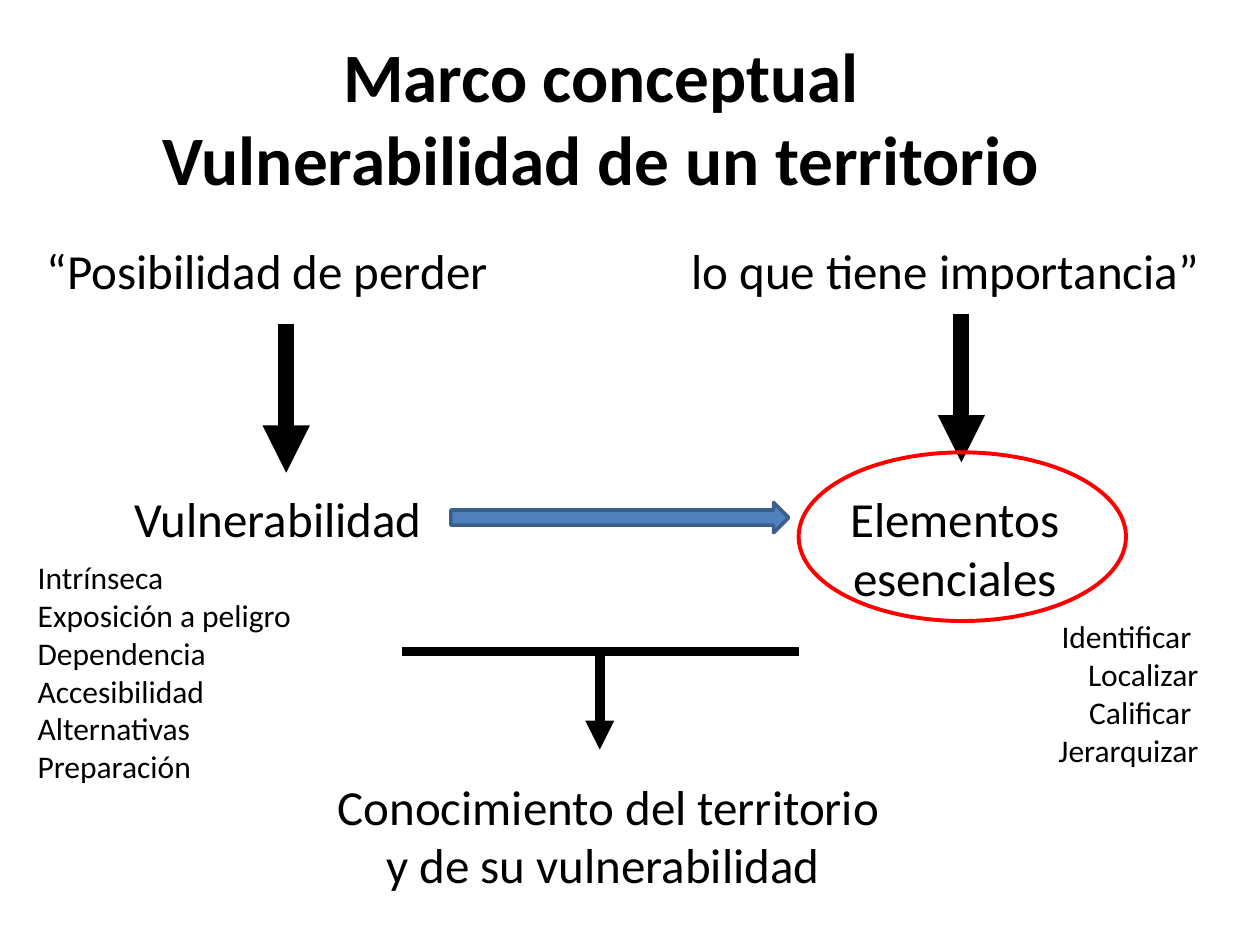
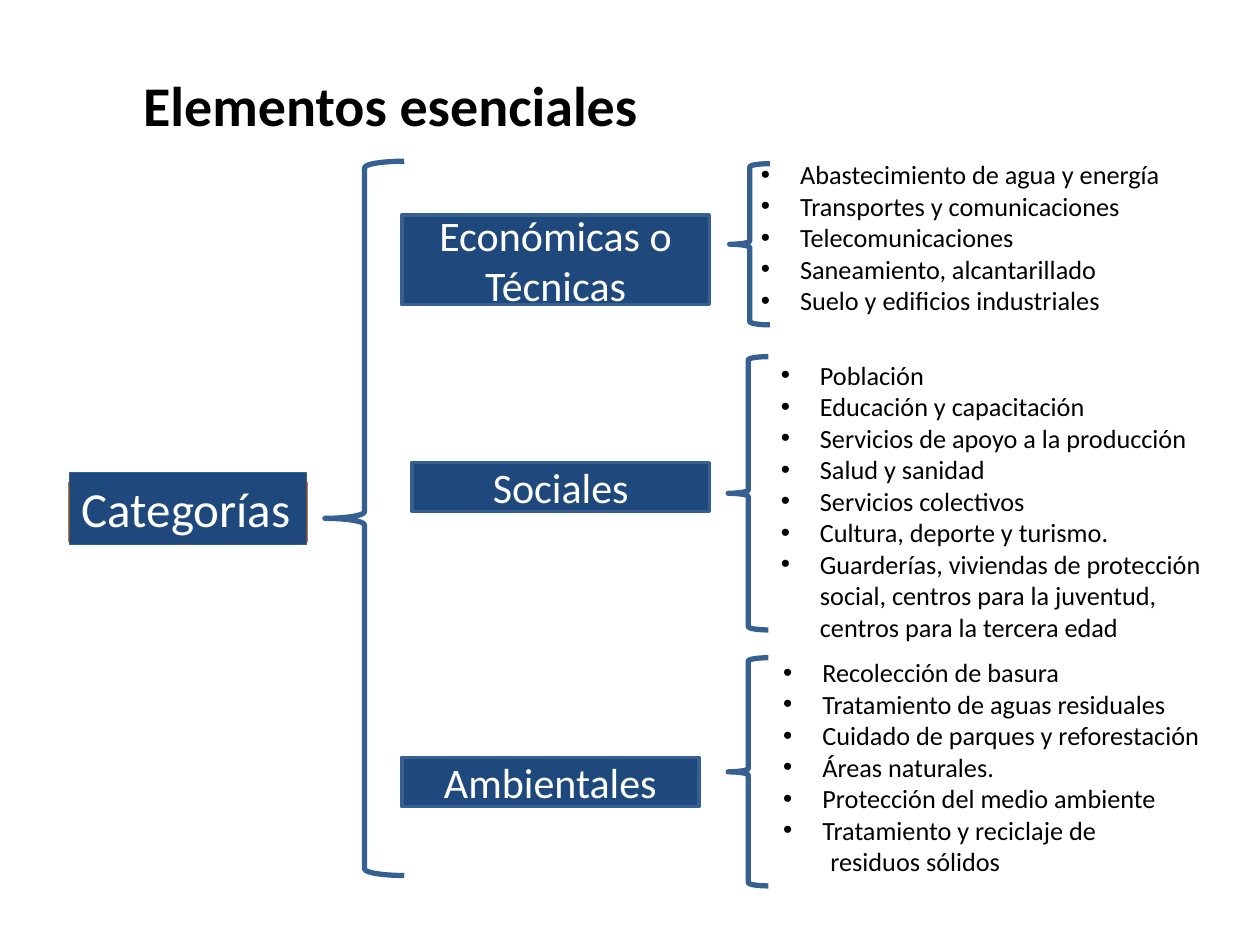
from lxml import etree
from pptx import Presentation
from pptx.dml.color import RGBColor
from pptx.enum.shapes import MSO_CONNECTOR, MSO_SHAPE
from pptx.enum.text import MSO_ANCHOR, MSO_AUTO_SIZE, PP_ALIGN
from pptx.oxml.ns import qn
from pptx.util import Cm, Pt

LEFT, CENTER, RIGHT = PP_ALIGN.LEFT, PP_ALIGN.CENTER, PP_ALIGN.RIGHT
TOP, MIDDLE = MSO_ANCHOR.TOP, MSO_ANCHOR.MIDDLE
RECTANGLE, ELLIPSE = MSO_SHAPE.RECTANGLE, MSO_SHAPE.OVAL
BRACE, BLOCK_ARROW = MSO_SHAPE.LEFT_BRACE, MSO_SHAPE.RIGHT_ARROW

FONT = "Calibri"
BLACK, WHITE, RED = "000000", "FFFFFF", "FF0000"
NAVY, STEEL = "1F497D", "376092"
BLUE, DARK_BLUE = "4F81BD", "3A5F8C"
PEACH, ORANGE = "FAC090", "E46C0A"
BULLET_INDENT = 0.79

# Category name, its box, its brace, its list area, its elements
CATEGORIES = [
    ("Económicas o Técnicas", (8.1, 4.34, 6.2, 1.8), (14.71, 3.3, 0.81, 3.25),
     (15.09, 3.07, 9.37, 3.45),
     ["Abastecimiento de agua y energía", "Transportes y comunicaciones",
      "Telecomunicaciones", "Saneamiento, alcantarillado",
      "Suelo y edificios industriales"]),
    ("Sociales", (8.31, 9.32, 5.99, 0.99), (14.68, 7.19, 0.81, 5.51),
     (15.49, 7.11, 9.19, 6.02),
     ["Población", "Educación y capacitación",
      "Servicios de apoyo a la producción", "Salud y sanidad",
      "Servicios colectivos", "Cultura, deporte y turismo.",
      "Guarderías, viviendas de protección social, "
      "centros para la juventud, centros para la tercera edad"]),
    ("Ambientales", (8.1, 15.27, 5.99, 0.99), (14.68, 13.26, 0.81, 4.6),
     (15.54, 13.11, 9.37, 4.75),
     ["Recolección de basura", "Tratamiento de aguas residuales",
      "Cuidado de parques y reforestación", "Áreas naturales.",
      "Protección del medio ambiente", "Tratamiento y reciclaje de"]),
]


def color(hex_value):
    return RGBColor.from_string(hex_value)


def area(place):
    return [Cm(length) for length in place]


def write(frame, text, size=28, ink=BLACK, bold=False, align=LEFT,
          bullet=False, indent=0):
    """Add one paragraph per line of text; a vertical tab breaks a line."""
    for line in text.split("\n"):
        para = frame.paragraphs[-1]
        if para.runs:
            para = frame.add_paragraph()
        para.text = line
        para.alignment = align
        for span in para.runs:
            span.font.name = FONT
            span.font.size = Pt(size)
            span.font.bold = bold
            span.font.color.rgb = color(ink)
        properties = para._p.get_or_add_pPr()
        if bullet:
            indent = BULLET_INDENT
            properties.set("indent", str(-Cm(indent)))
            etree.SubElement(properties, qn("a:buFont"), typeface="Arial")
            etree.SubElement(properties, qn("a:buChar"), char="•")
        properties.set("marL", str(Cm(indent)))


def add_title(page, text, place, size):
    title = page.shapes.title
    title.left, title.top, title.width, title.height = area(place)
    frame = title.text_frame
    frame.auto_size = MSO_AUTO_SIZE.NONE
    frame.word_wrap = True
    frame.vertical_anchor = MIDDLE
    write(frame, text, size=size, bold=True, align=CENTER)


def add_text(page, text, place, wrap=False, **style):
    frame = page.shapes.add_textbox(*area(place)).text_frame
    frame.word_wrap = wrap
    write(frame, text, **style)
    return frame


def add_figure(page, kind, place, line, width, fill=None):
    shape = page.shapes.add_shape(kind, *area(place))
    shape.shadow.inherit = False
    shape.line.color.rgb = color(line)
    shape.line.width = Pt(width)
    if fill:
        shape.fill.solid()
        shape.fill.fore_color.rgb = color(fill)
    else:
        shape.fill.background()
    return shape


def add_label(page, text, place, width=2, anchor=MIDDLE, **style):
    box = add_figure(page, RECTANGLE, place, STEEL, width, NAVY)
    box.text_frame.word_wrap = True
    box.text_frame.vertical_anchor = anchor
    write(box.text_frame, text, ink=WHITE, **style)


def add_line(page, start, end, width, arrow=True):
    line = page.shapes.add_connector(
        MSO_CONNECTOR.STRAIGHT, *area(start), *area(end))
    line.line.color.rgb = color(BLACK)
    line.line.width = Pt(width)
    if arrow:
        etree.SubElement(line.line._get_or_add_ln(), qn("a:tailEnd"),
                         type="triangle")
    etree.SubElement(line._element.spPr, qn("a:effectLst"))


def build_framework(page):
    add_title(page, "Marco conceptual\vVulnerabilidad de un territorio",
              (0.69, 0.76, 22.86, 3.18), 39.6)

    # Definition and the two concepts it leads to
    add_text(page, "“Posibilidad de perder", (0.69, 4.72, 10.13, 1.45))
    add_text(page, "lo que tiene importancia”", (13.69, 4.72, 11.35, 1.45))
    add_text(page, "Vulnerabilidad", (2.46, 9.73, 6.78, 1.45))
    add_text(page, "Elementos\nesenciales", (16.66, 9.73, 5.18, 2.62),
             align=CENTER)
    for x, y in ((5.77, 6.53), (19.38, 6.32)):
        add_line(page, (x, y), (x, y + 3), 9)

    # Aspects of each concept
    add_text(page, "Intrínseca\nExposición a peligro\n"
             "Dependencia Accesibilidad\nAlternativas\nPreparación",
             (0.51, 11.13, 6.81, 4.83), wrap=True, size=18)
    add_text(page, "Identificar \nLocalizar\nCalificar \nJerarquizar",
             (20.7, 12.32, 3.71, 4.06), wrap=True, size=18, align=RIGHT)

    # Result
    add_line(page, (12.09, 13.13), (12.09, 15.11), 5.5)
    add_line(page, (8.1, 13.13), (16.1, 13.13), 5.5, arrow=False)
    add_text(page, "Conocimiento del territorio\ny de su vulnerabilidad ",
             (6.5, 15.52, 11.53, 2.64), align=CENTER)

    # Link between the concepts
    add_figure(page, BLOCK_ARROW, (9.09, 10.13, 6.81, 0.61), DARK_BLUE, 2, BLUE)
    add_figure(page, ELLIPSE, (16.1, 9.12, 6.6, 3.4), RED, 2.25)


def build_elements(page):
    add_title(page, "Elementos esenciales", (1.27, 1.22, 13.21, 1.75), 32)

    # Root of the tree
    add_figure(page, RECTANGLE, (1.4, 9.73, 4.78, 1.19), ORANGE, 2, PEACH)
    add_label(page, "Categorías", (1.4, 9.53, 4.78, 1.45), width=0.75,
              anchor=TOP)
    add_figure(page, BRACE, (6.55, 3.25, 1.6, 14.4), STEEL, 3)

    # Branches
    for name, label_place, brace_place, list_place, elements in CATEGORIES:
        add_label(page, name, label_place, size=24, align=CENTER)
        add_figure(page, BRACE, brace_place, STEEL, 3)
        frame = add_text(page, "\n".join(elements), list_place, wrap=True,
                         size=15, bullet=True)
    # The last element continues on an indented line
    write(frame, "residuos sólidos", size=15, indent=0.95)


def main():
    deck = Presentation()
    deck.slide_width, deck.slide_height = Cm(25.4), Cm(19.05)
    title_only = deck.slide_layouts[5]
    for build in (build_framework, build_elements):
        build(deck.slides.add_slide(title_only))
    deck.save("out.pptx")


if __name__ == "__main__":
    main()
